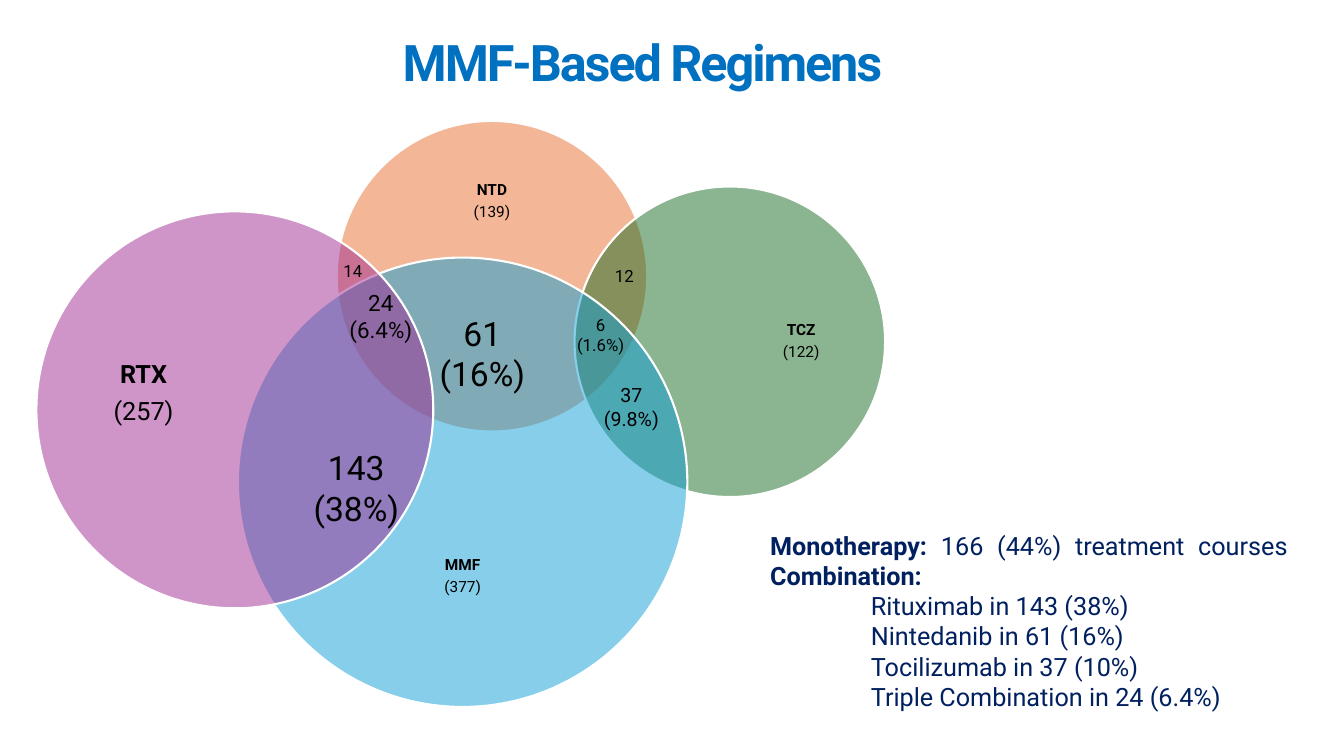
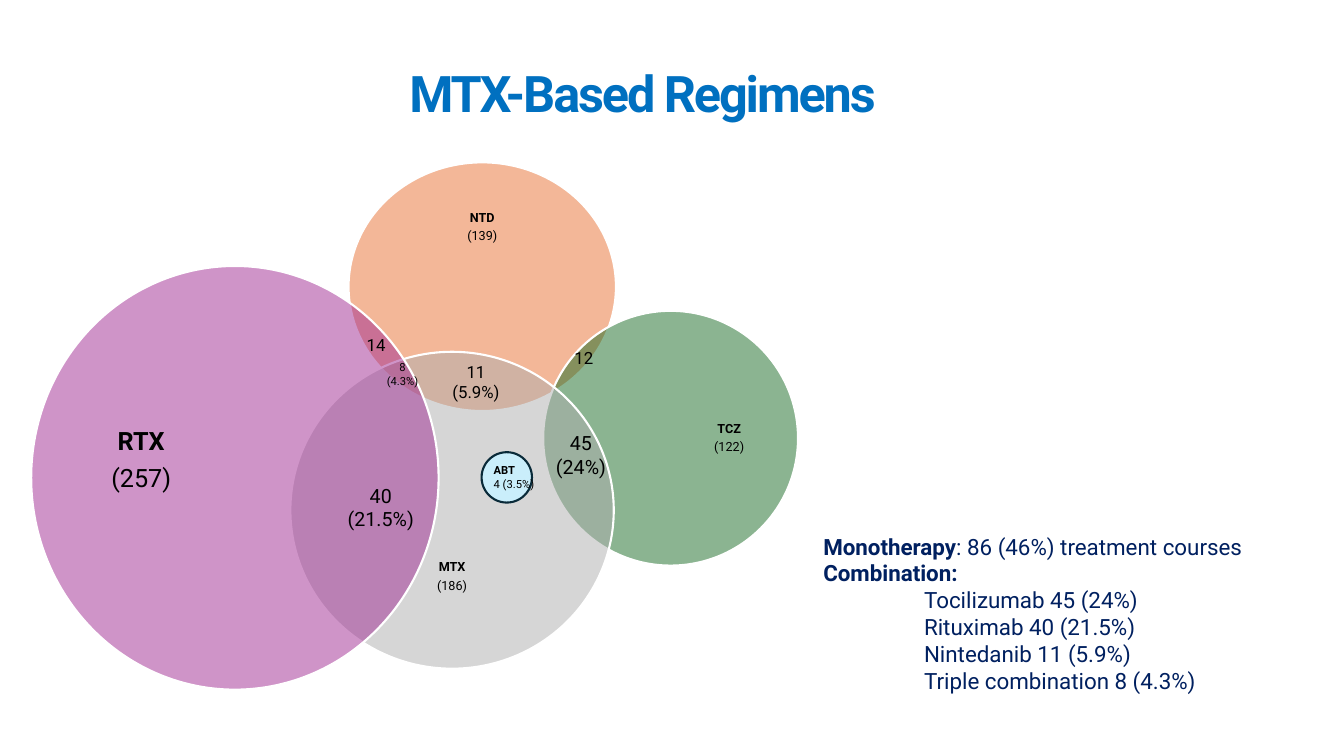
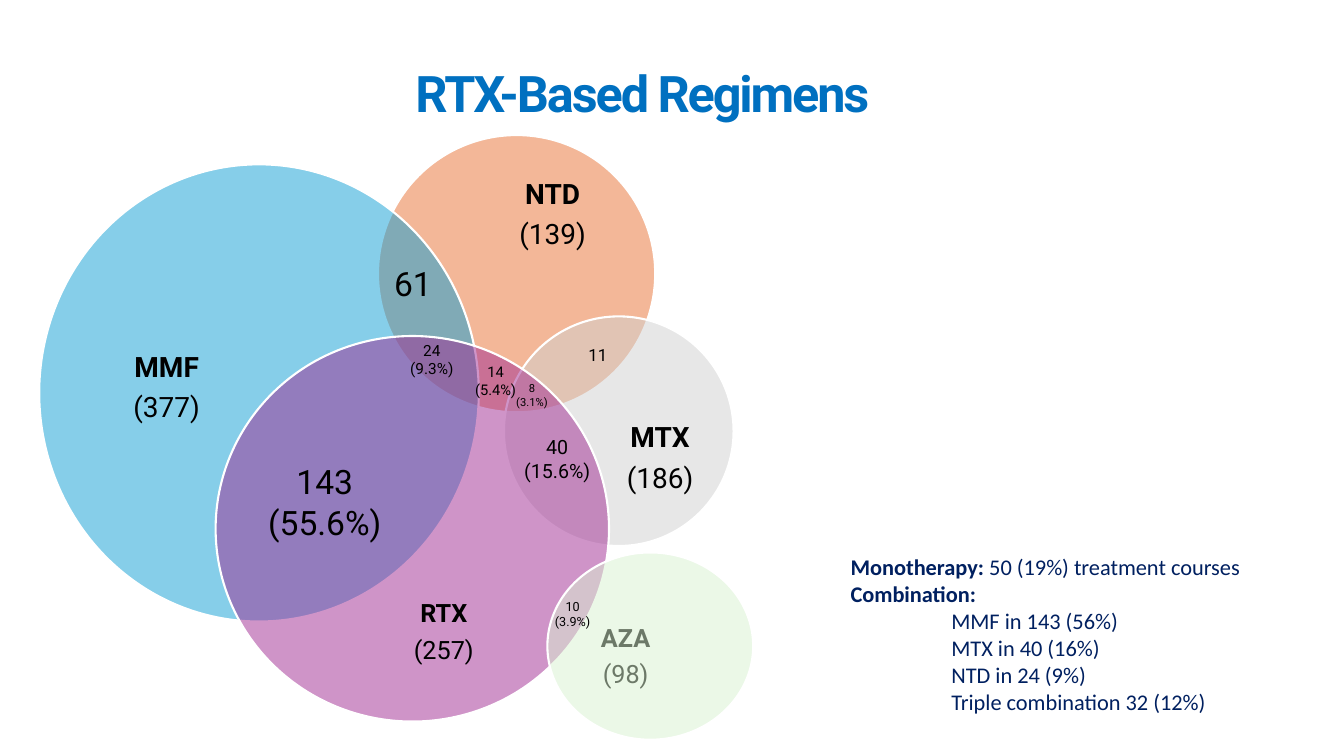
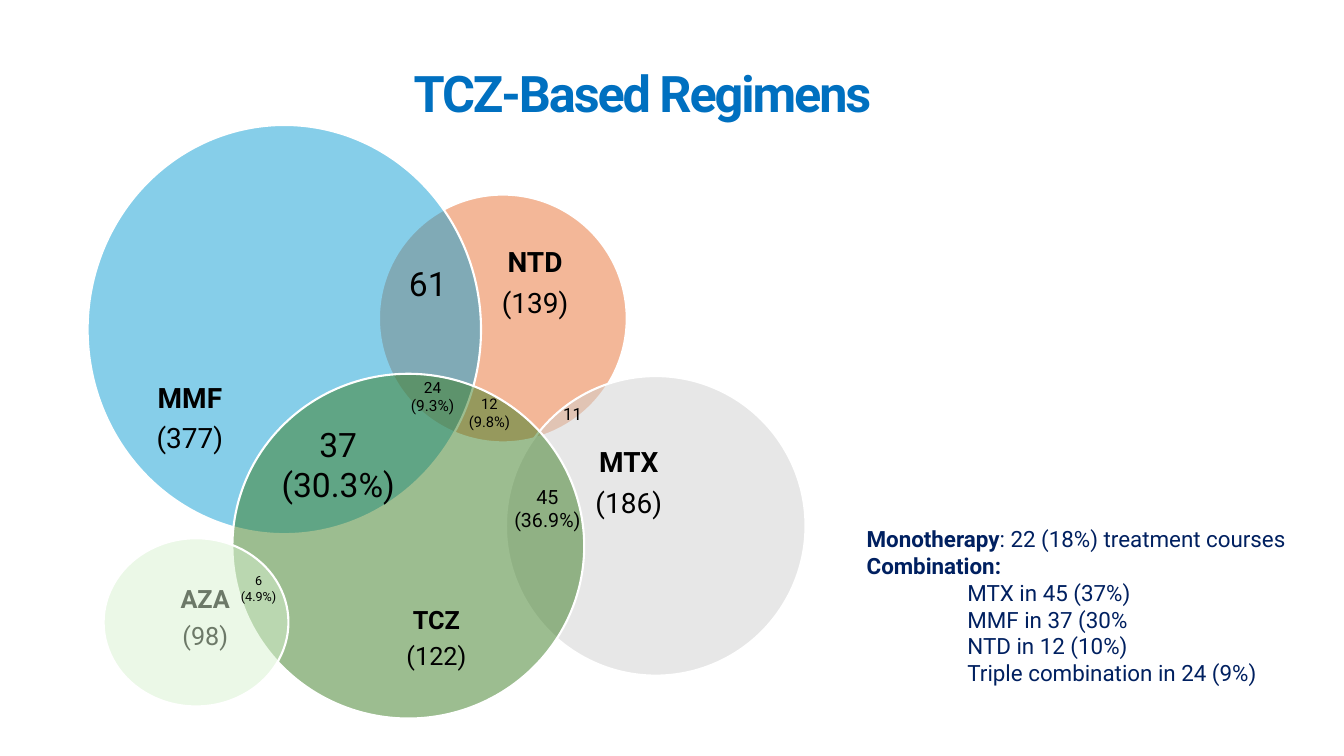
from lxml import etree
from pptx import Presentation
from pptx.dml.color import RGBColor
from pptx.enum.shapes import MSO_SHAPE
from pptx.enum.text import MSO_ANCHOR, PP_ALIGN
from pptx.oxml.ns import qn
from pptx.util import Pt

OVAL = MSO_SHAPE.OVAL
TOP, MIDDLE = MSO_ANCHOR.TOP, MSO_ANCHOR.MIDDLE
LEFT, CENTER, JUSTIFY = PP_ALIGN.LEFT, PP_ALIGN.CENTER, PP_ALIGN.JUSTIFY

WHITE = RGBColor.from_string("FFFFFF")
BLACK = RGBColor.from_string("000000")
BLUE = RGBColor.from_string("0070C0")
NAVY = RGBColor.from_string("002060")
ORANGE = RGBColor.from_string("E97132")
GREEN = RGBColor.from_string("196B24")
LEAF = RGBColor.from_string("3B7D23")
MINT = RGBColor.from_string("D9F2D0")
SKY = RGBColor.from_string("0F9ED5")
PURPLE = RGBColor.from_string("A02B93")
GREY = RGBColor.from_string("AEAEAE")
SILVER = RGBColor.from_string("D1D1D1")
ICE = RGBColor.from_string("CAEEFB")
INK = RGBColor.from_string("092A39")

FONT = "Roboto"
COUNTS = {"NTD": "(139)", "TCZ": "(122)", "MMF": "(377)",
          "RTX": "(257)", "MTX": "(186)", "AZA": "(98)"}
FILLS = {"NTD": ORANGE, "TCZ": GREEN, "MMF": SKY,
         "RTX": PURPLE, "MTX": GREY, "AZA": MINT}
LIGHT_FILLS = FILLS | {"TCZ": LEAF, "MTX": SILVER}
OVAL_RATIOS = {"MMF": 1.04, "AZA": 0.91, "RTX": 0.98, "TCZ": 0.98}
PLACES = {"top": (0.5, 0.26), "right": (0.73, 0.5), "bottom": (0.5, 0.71),
          "left": (0.27, 0.46), "low": (0.58, 0.77)}
MAJOR_PLACES = {"left", "low"}
MAJOR_SIZE = 18
VEILED = {"AZA"}
BOX = 120
INSET_X, INSET_Y = 7.2, 3.6

# drugs: name, circle (left, top, width), label place inside the circle
# overlaps: by font size, lines with centre x and top
SLIDES = [
    {
        "title": "MMF-Based Regimens", "title_top": 2,
        "label_size": 11, "fills": FILLS, "ratios": {},
        "drugs": [
            ("NTD", (240.5, 86.4, 221.8), "top"),
            ("TCZ", (410.4, 133.2, 221.8), "right"),
            ("MMF", (170, 184, 321), "bottom"),
            ("RTX", (26, 151, 283.5), "left"),
        ],
        "overlaps": {
            24: [("61 (16%)", 344.5, 220), ("143 (38%)", 254.5, 316)],
            16: [("24 (6.4%)", 272, 203)],
            14: [("37 (9.8%)", 451, 270)],
            12: [("14", 252, 183), ("12", 446, 186), ("6 (1.6%)", 429, 221)],
        },
        "summary": {
            "corner": (543, 375), "width": 384, "size": 18, "align": JUSTIFY,
            "mono": ("Monotherapy:", " 166 (44%) treatment courses"),
            "items": ["Rituximab in 143 (38%)", "Nintedanib in 61 (16%)",
                      "Tocilizumab in 37 (10%)", "Triple Combination in 24 (6.4%)"],
        },
    },
    {
        "title": "MTX-Based Regimens",
        "label_size": 9, "fills": FILLS,
        "ratios": {"NTD": 0.93, "MTX": 0.98, "RTX": 1.04},
        "drugs": [
            ("NTD", (249, 116, 191), "top"),
            ("TCZ", (388, 222, 182), "right"),
            ("MTX", (207.4, 251.3, 231), "bottom"),
            ("RTX", (22.3, 190, 291), "left"),
        ],
        "overlaps": {
            14: [("45 (24%)", 415, 304.6), ("40 (21.5%)", 272, 342)],
            12: [("11 (5.9%)", 340, 255), ("14", 268.6, 235.4), ("12", 417, 245)],
            8: [("8 (4.3%)", 287.6, 254)],
        },
        "subset": {"circle": (344, 323, 36), "name": "ABT", "share": "4 (3.5%)"},
        "summary": {
            "corner": (581, 377),
            "mono": ("Monotherapy", ": 86 (46%) treatment courses"),
            "items": ["Tocilizumab 45 (24%)", "Rituximab 40 (21.5%)",
                      "Nintedanib 11 (5.9%)", "Triple combination 8 (4.3%)"],
        },
    },
    {
        "title": "RTX-Based Regimens",
        "label_size": 20, "fills": LIGHT_FILLS, "ratios": OVAL_RATIOS,
        "drugs": [
            ("NTD", (270, 96.5, 198), (0.63, 0.29)),
            ("MTX", (360, 226, 164), (0.68, 0.62)),
            ("MMF", (28, 117.4, 314), (0.29, 0.49)),
            ("RTX", (154, 240, 281), "low"),
            ("AZA", (391, 394.6, 147), (0.38, 0.56)),
        ],
        "overlaps": {
            24: [("143 (55.6%)", 232, 326), ("61", 295, 184)],
            14: [("40 (15.6%)", 398, 307.4)],
            12: [("11", 427, 242.6)],
            11: [("24 (9.3%)", 308.5, 240)],
            10.5: [("14 (5.4%)", 354, 255.6)],
            9: [("10 (3.9%)", 409, 424)],
            8: [("8 (3.1%)", 380, 269)],
        },
        "summary": {
            "corner": (600.5, 391.7), "font": "Calibri",
            "mono": ("Monotherapy:", " 50 (19%) treatment courses"),
            "items": ["MMF in 143 (56%)", "MTX in 40 (16%)",
                      "NTD in 24 (9%)", "Triple combination 32 (12%)"],
        },
    },
    {
        "title": "TCZ-Based Regimens",
        "label_size": 20, "fills": LIGHT_FILLS, "ratios": OVAL_RATIOS,
        "drugs": [
            ("NTD", (270.7, 139, 177), (0.63, 0.36)),
            ("MTX", (361.4, 268.6, 214), (0.41, 0.36)),
            ("MMF", (62.6, 89.3, 281), (0.26, 0.72)),
            ("TCZ", (166, 267, 251.3), "low"),
            ("AZA", (74, 384.5, 132), (0.55, 0.48)),
        ],
        "overlaps": {
            24: [("37 (30.3%)", 241.6, 299), ("61", 305.6, 184)],
            14: [("45 (36.9%)", 391, 342.7)],
            12: [("11", 409, 285)],
            11: [("24 (9.3%)", 309, 266.4)],
            10.5: [("12 (9.8%)", 349.6, 278.6)],
            9: [("6 (4.9%)", 184.7, 406)],
        },
        "summary": {
            "corner": (612, 371.5),
            "mono": ("Monotherapy", ": 22 (18%) treatment courses"),
            "items": ["MTX in 45 (37%)", "MMF in 37 (30%",
                      "NTD in 12 (10%)", "Triple combination in 24 (9%)"],
        },
    },
]


def apply_format(target, values):
    for name, value in values.items():
        setattr(target, name, value)


def add_text(page, area, paragraphs, size, color=BLACK, font=FONT, align=CENTER,
             anchor=TOP, **para_format):
    box = page.shapes.add_textbox(*map(Pt, area))
    frame = box.text_frame
    apply_format(frame, {
        "word_wrap": True, "vertical_anchor": anchor,
        "margin_left": Pt(INSET_X), "margin_right": Pt(INSET_X),
        "margin_top": Pt(INSET_Y), "margin_bottom": Pt(INSET_Y),
    })
    for index, spans in enumerate(paragraphs):
        para = frame.add_paragraph() if index else frame.paragraphs[0]
        apply_format(para, {"alignment": align, **para_format})
        for text, bold in spans:
            span = para.add_run()
            span.text = text
            apply_format(span.font, {"name": font, "size": Pt(size), "bold": bold})
            span.font.color.rgb = color
    return frame


def add_circle(page, area, fill, line=WHITE, opacity=None):
    circle = page.shapes.add_shape(OVAL, *map(Pt, area))
    circle.shadow.inherit = False
    circle.fill.solid()
    circle.fill.fore_color.rgb = fill
    circle.line.color.rgb = line
    circle.line.width = Pt(1.5)
    if opacity:
        color = circle.fill._xPr.find(qn("a:solidFill"))[0]
        etree.SubElement(color, qn("a:alpha")).set("val", opacity)


def add_label(page, name, circle, place, size):
    left, top, width, height = circle
    across, down = PLACES.get(place, place)
    area = (left + across * width - BOX / 2, top + down * height - BOX / 2, BOX, BOX)
    add_text(page, area, [[(name, True)], [(COUNTS[name], False)]], size,
             anchor=MIDDLE, line_spacing=0.9, space_after=Pt(round(0.37 * size, 1)))


def add_drug(page, name, circle, place, content):
    left, top, width = circle
    area = (left, top, width, width * content["ratios"].get(name, 1))
    veiled = name in VEILED
    major = veiled or place in MAJOR_PLACES
    size = MAJOR_SIZE if major else content["label_size"]
    if veiled:
        add_label(page, name, area, place, size)
    add_circle(page, area, content["fills"][name], opacity="50000")
    if not veiled:
        add_label(page, name, area, place, size)


def add_title(page, title, top=24.5):
    frame = add_text(page, (109, top, 700, 90), [[(title, True)]], 36, BLUE,
                     anchor=MIDDLE, line_spacing=0.85)
    frame.paragraphs[0].runs[0].font._element.set("spc", "-150")


def add_summary(page, corner, mono, items, width=340, size=16, align=LEFT, font=FONT):
    lead, courses = mono
    head = [(lead, True), (courses, False)]
    if align == JUSTIFY:
        heads = [head + [(" Combination:", True)]]
    else:
        heads = [head, [("Combination:", True)]]
    frame = add_text(page, (*corner, width, 8 * size),
                     heads + [[(item, False)] for item in items],
                     size, NAVY, font, align)
    for para in frame.paragraphs[len(heads):]:
        para._p.get_or_add_pPr().set("marL", str(Pt(72)))


def add_subset(page, circle, name, share):
    left, top, width = circle
    add_circle(page, (left, top, width, width), ICE, INK)
    add_text(page, (left + 1.5, top + 4.5, 60, 27),
             [[(name, True)], [(share, False)]], 8, align=LEFT)


def main():
    deck = Presentation()
    deck.slide_width, deck.slide_height = Pt(960), Pt(540)
    for content in SLIDES:
        page = deck.slides.add_slide(deck.slide_layouts[6])
        for drug in content["drugs"]:
            add_drug(page, *drug, content)
        if "subset" in content:
            add_subset(page, **content["subset"])
        for size, overlaps in content["overlaps"].items():
            for text, x, top in overlaps:
                lines = [[(line, False)] for line in text.split()]
                add_text(page, (x - BOX / 2, top, BOX, 3 * size), lines, size)
        add_title(page, content["title"], content.get("title_top", 24.5))
        add_summary(page, **content["summary"])
    deck.save("out.pptx")


if __name__ == "__main__":
    main()
